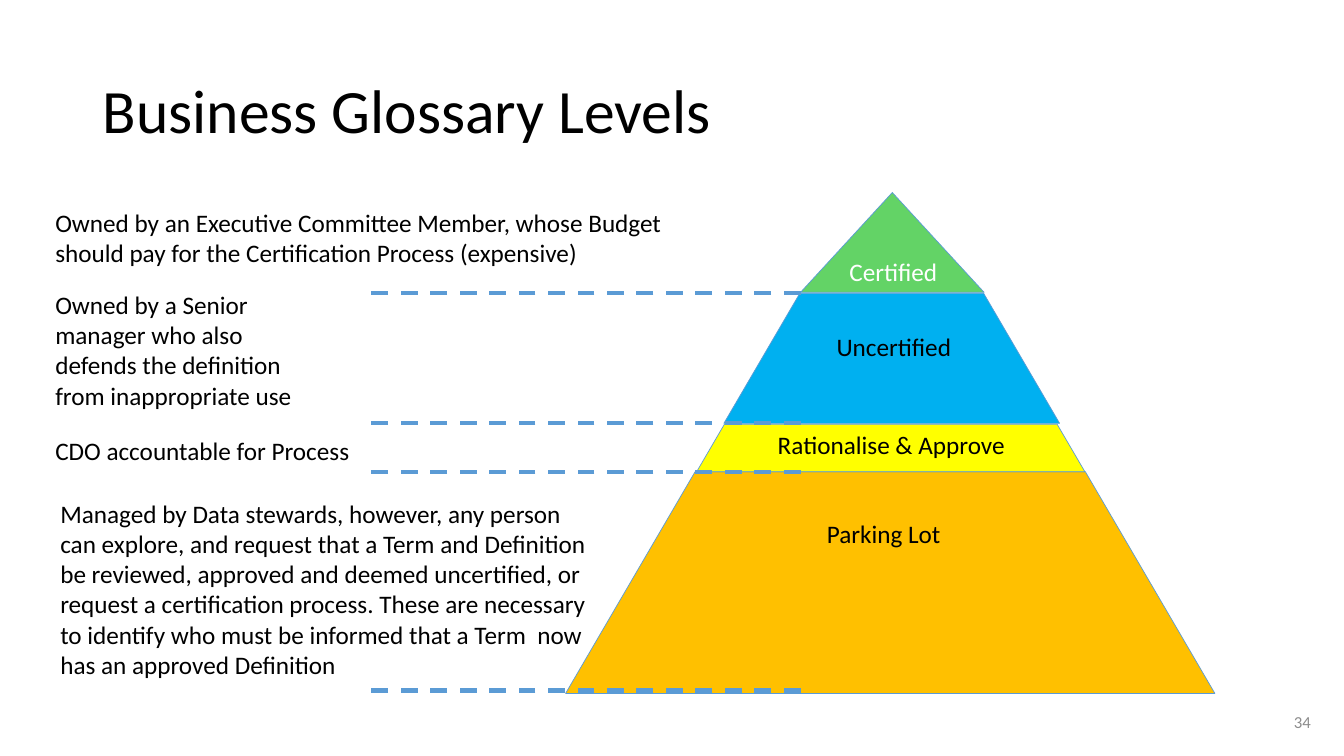
from pptx import Presentation
from pptx.dml.color import RGBColor
from pptx.enum.dml import MSO_LINE_DASH_STYLE as Dash
from pptx.enum.shapes import MSO_CONNECTOR as Connector, MSO_SHAPE as Shape
from pptx.enum.text import MSO_ANCHOR as Anchor, MSO_AUTO_SIZE as AutoSize, PP_ALIGN as Align
from pptx.oxml.ns import qn
from pptx.util import Inches, Pt
from lxml import etree

FONT = "Calibri"
BLACK, WHITE, GREY, BLUE = "000000", "FFFFFF", "8C8C8C", "5B9BD5"
TITLE = "Business Glossary Levels"
PAGE_NUMBER = "34"
SLOPE = 0.584

# name, preset, fill, text colour, level (left, top, width, height), label box
LEVELS = [
    ("Parking Lot", Shape.TRAPEZOID, "FFC000", BLACK,
     (5.61, 4.68, 6.44, 2.2), (6.81, 5.09, 3.91, 0.99)),
    ("Uncertified", Shape.TRAPEZOID, "00B0F0", BLACK,
     (7.18, 2.91, 3.33, 1.29), (7.71, 3.24, 2.31, 0.55)),
    ("Certified", Shape.ISOSCELES_TRIANGLE, "63D366", WHITE,
     (7.94, 1.91, 1.82, 0.99), (8.09, 2.49, 1.54, 0.31)),
    ("Rationalise & Approve", Shape.TRAPEZOID, "FFFF00", BLACK,
     (6.91, 4.21, 3.85, 0.47), (7.14, 4.21, 3.4, 0.57)),
]
OWNERS = [
    ("Owned by an Executive Committee Member, whose Budget should pay for the "
     "Certification Process (expensive)", (0.45, 2.01, 6.36, 0.71)),
    ("Owned by a Senior manager who also defends the definition from "
     "inappropriate use", (0.45, 2.82, 2.89, 1.31)),
    ("CDO accountable for Process", (0.45, 4.27, 3.67, 0.4)),
    ("Managed by Data stewards, however, any person can explore, and request "
     "that a Term and Definition be reviewed, approved and deemed uncertified, "
     "or request a certification process. These are necessary to identify who "
     "must be informed that a Term  now has an approved Definition",
     (0.5, 4.89, 5.54, 1.92)),
]
DIVIDER_LEFT, DIVIDER_RIGHT = 3.66, 7.94
DIVIDER_TOPS = [2.91, 4.2, 4.68, 6.85]


def color(value):
    return RGBColor.from_string(value)


def inches(bounds):
    return [Inches(value) for value in bounds]


def write(box, text, size=18, fill=BLACK, align=Align.LEFT, anchor=Anchor.TOP, spacing=1.0):
    frame = box.text_frame
    frame.word_wrap = True
    frame.auto_size = AutoSize.NONE
    frame.vertical_anchor = anchor
    para = frame.paragraphs[0]
    para.alignment = align
    para.line_spacing = spacing
    span = para.add_run()
    span.text = text
    span.font.name = FONT
    span.font.size = Pt(size)
    span.font.color.rgb = color(fill)


def add_text(page, text, bounds, **style):
    write(page.shapes.add_textbox(*inches(bounds)), text, **style)


def add_level(page, preset, fill, bounds):
    level = page.shapes.add_shape(preset, *inches(bounds))
    level.shadow.inherit = False
    if preset == Shape.TRAPEZOID:
        level.adjustments[0] = SLOPE
    level.fill.solid()
    level.fill.fore_color.rgb = color(fill)
    level.line.color.rgb = color(BLUE)
    level.line.width = Pt(0.5)


def add_divider(page, top):
    divider = page.shapes.add_connector(
        Connector.STRAIGHT, *inches((DIVIDER_RIGHT, top, DIVIDER_LEFT, top)))
    divider.line.color.rgb = color(BLUE)
    divider.line.width = Pt(3)
    divider.line.dash_style = Dash.DASH
    etree.SubElement(divider._element.spPr, qn("a:effectLst"))


def main():
    deck = Presentation()
    deck.slide_width, deck.slide_height = Inches(13.33), Inches(7.5)
    page = deck.slides.add_slide(deck.slide_layouts[5])

    title = page.shapes.title
    title.left, title.top, title.width, title.height = inches((0.92, 0.4, 11.5, 1.45))
    write(title, TITLE, size=44, anchor=Anchor.MIDDLE, spacing=0.9)

    for name, preset, fill, text_fill, bounds, label_bounds in LEVELS:
        add_level(page, preset, fill, bounds)
        add_text(page, name, label_bounds, fill=text_fill, align=Align.CENTER)
    for text, bounds in OWNERS:
        add_text(page, text, bounds)
    for top in DIVIDER_TOPS:
        add_divider(page, top)
    add_text(page, PAGE_NUMBER, (12.56, 6.96, 0.54, 0.4), size=12, fill=GREY,
             align=Align.RIGHT, anchor=Anchor.MIDDLE)

    deck.save("out.pptx")


if __name__ == "__main__":
    main()
